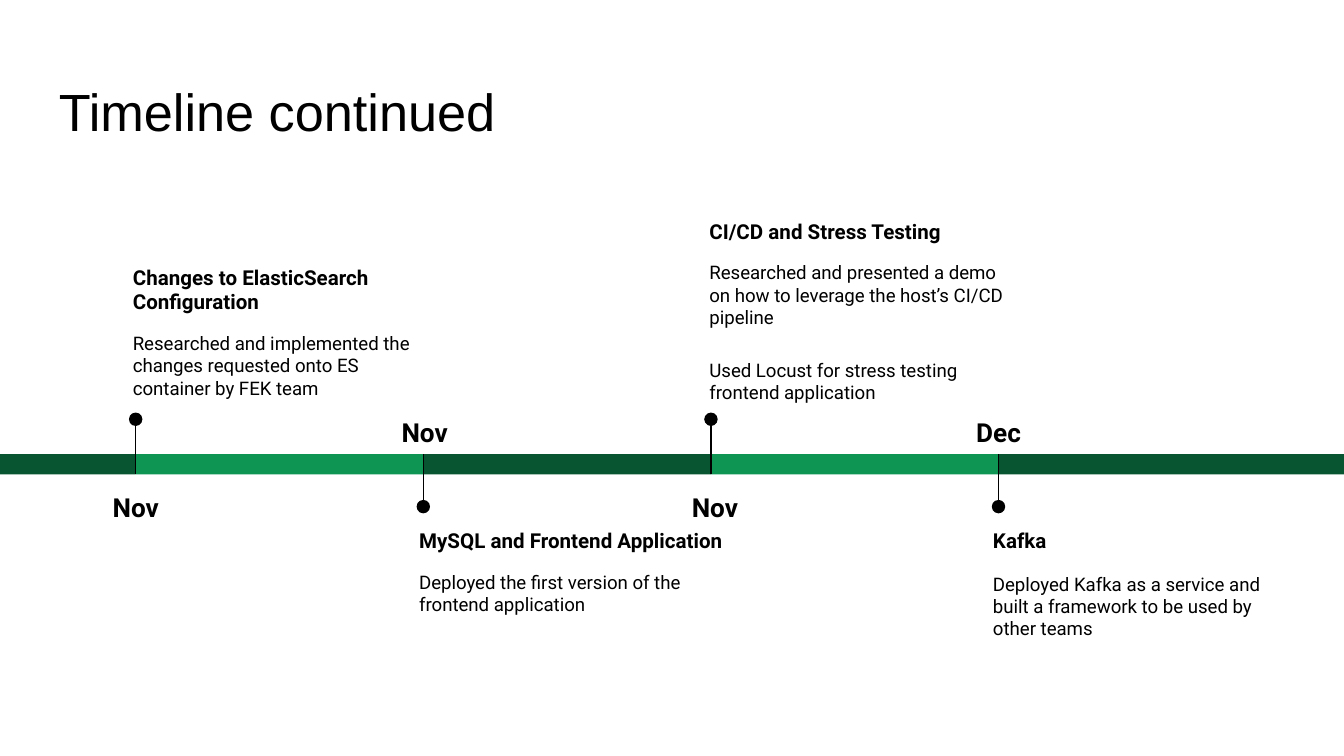
from dataclasses import dataclass

from lxml import etree
from pptx import Presentation
from pptx.dml.color import RGBColor
from pptx.enum.shapes import MSO_CONNECTOR, MSO_SHAPE
from pptx.enum.text import MSO_ANCHOR, PP_ALIGN
from pptx.oxml.ns import qn
from pptx.util import Inches, Pt

RECTANGLE = MSO_SHAPE.RECTANGLE
OVAL = MSO_SHAPE.OVAL
STRAIGHT = MSO_CONNECTOR.STRAIGHT
TOP = MSO_ANCHOR.TOP
LEFT = PP_ALIGN.LEFT
CENTER = PP_ALIGN.CENTER

COLORS = {"text": "000000", "dark": "085631", "light": "0E9453"}
SLIDE_WIDTH, SLIDE_HEIGHT = 10, 5.625
FIRST_COLUMN, COLUMN_WIDTH = 1.01, 2.14
BAR_TOP, BAR_HEIGHT = 3.38, 0.15
BAR_BOTTOM = BAR_TOP + BAR_HEIGHT
DOT_SIZE = 0.1
DATE_WIDTH, DATE_HEIGHT = 0.82, 0.41
DETAIL_WIDTH = 2.46


@dataclass
class TextLine:
    text: str
    size: float
    font: str = "Roboto"
    bold: bool = False
    space_before: float = 0
    space_after: float = 0
    line_spacing: float = 1.0
    alignment: PP_ALIGN = LEFT


@dataclass
class Milestone:
    column: int
    date: str
    heading: str
    details: list[str]
    above: bool
    detail_top: float
    detail_height: float = 1.03
    detail_shift: float = -0.12
    date_shift: float = 0
    heading_gap: float = 9.4


MILESTONES = [
    Milestone(0, "Nov", "Changes to ElasticSearch Configuration",
              ["Researched and implemented the changes requested onto ES container by FEK team"],
              True, 1.87),
    Milestone(1, "Nov", "MySQL and Frontend Application",
              ["Deployed the first version of the frontend application"],
              False, 3.83, detail_shift=-0.13, date_shift=0.01),
    Milestone(2, "Nov", "CI/CD and Stress Testing",
              ["Researched and presented a demo on how to leverage the host’s CI/CD pipeline",
               "Used Locust for stress testing frontend application"],
              True, 1.53, detail_height=1.61, detail_shift=-0.11, date_shift=0.03),
    Milestone(3, "Dec", "Kafka",
              ["Deployed Kafka as a service and built a framework to be used by other teams"],
              False, 3.83, detail_shift=-0.14, heading_gap=10.5),
]


def color(name: str) -> RGBColor:
    return RGBColor.from_string(COLORS[name])


def column_left(column: int) -> float:
    return FIRST_COLUMN + column * COLUMN_WIDTH


def add_filled(slide, kind: MSO_SHAPE, left: float, top: float,
               width: float, height: float, fill: str) -> None:
    shape = slide.shapes.add_shape(kind, Inches(left), Inches(top), Inches(width), Inches(height))
    shape.shadow.inherit = False
    shape.fill.solid()
    shape.fill.fore_color.rgb = color(fill)
    shape.line.fill.background()


def add_stem(slide, x: float, start: float, end: float) -> None:
    connector = slide.shapes.add_connector(
        STRAIGHT, Inches(x), Inches(start), Inches(x), Inches(end))
    connector.line.color.rgb = color("text")
    connector.line.width = Pt(0.75)
    etree.SubElement(connector._element.spPr, qn("a:effectLst"))


def add_text(slide, left: float, top: float, width: float, height: float,
             lines: list[TextLine]) -> None:
    box = slide.shapes.add_textbox(Inches(left), Inches(top), Inches(width), Inches(height))
    frame = box.text_frame
    frame.word_wrap = True
    frame.vertical_anchor = TOP
    frame.margin_left = frame.margin_right = Inches(0.1)
    frame.margin_top = frame.margin_bottom = Inches(0.1)
    for index, line in enumerate(lines):
        paragraph = frame.add_paragraph() if index else frame.paragraphs[0]
        paragraph.text = line.text
        paragraph.alignment = line.alignment
        paragraph.line_spacing = line.line_spacing
        paragraph.space_before = Pt(line.space_before)
        paragraph.space_after = Pt(line.space_after)
        paragraph.font.name = line.font
        paragraph.font.size = Pt(line.size)
        paragraph.font.bold = line.bold
        paragraph.font.color.rgb = color("text")


def add_milestone(slide, milestone: Milestone) -> None:
    x = column_left(milestone.column)
    is_last = milestone is MILESTONES[-1]
    bar_width = SLIDE_WIDTH - x if is_last else COLUMN_WIDTH
    bar_color = "light" if milestone.above else "dark"
    add_filled(slide, RECTANGLE, x, BAR_TOP, bar_width, BAR_HEIGHT, bar_color)

    if milestone.above:
        stem_start, stem_end, dot_center, date_top = 3.13, BAR_BOTTOM, 3.12, 3.52
    else:
        stem_start, stem_end, dot_center, date_top = 3.77, BAR_TOP, 3.77, 2.96
    add_stem(slide, x, stem_start, stem_end)
    add_filled(slide, OVAL, x - DOT_SIZE / 2, dot_center - DOT_SIZE / 2,
               DOT_SIZE, DOT_SIZE, "text")

    date = TextLine(milestone.date, 14, bold=True, line_spacing=1.15, alignment=CENTER)
    add_text(slide, x + milestone.date_shift - DATE_WIDTH / 2, date_top,
             DATE_WIDTH, DATE_HEIGHT, [date])

    lines = [TextLine(milestone.heading, 11, bold=True)]
    for index, detail in enumerate(milestone.details):
        gap = 16 if index else milestone.heading_gap
        lines.append(TextLine(detail, 10, space_before=gap))
    add_text(slide, x + milestone.detail_shift, milestone.detail_top,
             DETAIL_WIDTH, milestone.detail_height, lines)


def main() -> None:
    presentation = Presentation()
    presentation.slide_width = Inches(SLIDE_WIDTH)
    presentation.slide_height = Inches(SLIDE_HEIGHT)
    slide = presentation.slides.add_slide(presentation.slide_layouts[6])
    add_text(slide, 0.34, 0.49, 9.32, 0.63, [TextLine("Timeline continued", 28, font="Arial")])
    add_filled(slide, RECTANGLE, 0, BAR_TOP, FIRST_COLUMN, BAR_HEIGHT, "dark")
    for milestone in MILESTONES:
        add_milestone(slide, milestone)
    presentation.save("out.pptx")


if __name__ == "__main__":
    main()
